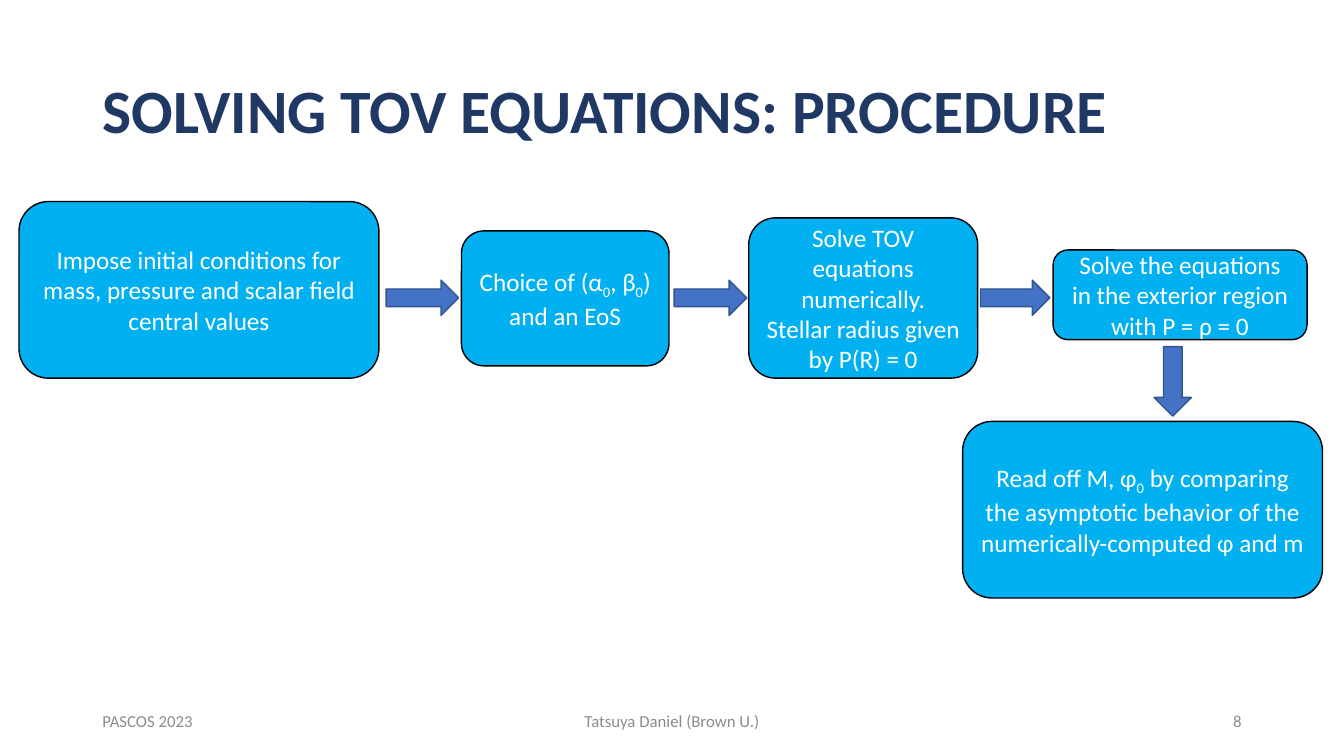
"""Build the slide that shows the procedure for solving the TOV equations."""
from pptx import Presentation
from pptx.dml.color import RGBColor
from pptx.enum.shapes import MSO_SHAPE
from pptx.enum.text import MSO_ANCHOR, PP_ALIGN
from pptx.util import Cm, Pt

ROUNDED = MSO_SHAPE.ROUNDED_RECTANGLE
ARROW = MSO_SHAPE.RIGHT_ARROW
MIDDLE = MSO_ANCHOR.MIDDLE
LEFT, CENTER, RIGHT = PP_ALIGN.LEFT, PP_ALIGN.CENTER, PP_ALIGN.RIGHT

NAVY = RGBColor(0x20, 0x38, 0x64)
SKY = RGBColor(0x00, 0xB0, 0xF0)
BLUE = RGBColor(0x44, 0x72, 0xC4)
DARK_BLUE = RGBColor(0x32, 0x54, 0x91)
BLACK = RGBColor(0x00, 0x00, 0x00)
WHITE = RGBColor(0xFF, 0xFF, 0xFF)
GRAY = RGBColor(0x8C, 0x8C, 0x8C)

TITLE = "SOLVING TOV EQUATIONS: PROCEDURE"
TITLE_AREA = (2.33, 1.01, 29.21, 3.68)

STEPS = [
    ((0.48, 5.08, 9.07, 4.45),
     ["Impose initial conditions for mass, pressure and scalar field central values"]),
    ((11.63, 5.82, 5.23, 3.4),
     ["Choice of (α", "0", ", β", "0", ") and an EoS"]),
    ((18.87, 5.49, 5.77, 4.04),
     ["Solve TOV equations numerically. Stellar radius given by P(R) = 0"]),
    ((26.54, 6.3, 6.4, 2.26),
     ["Solve the equations in the exterior region with P = ρ = 0"]),
    ((24.26, 10.62, 9.07, 4.45),
     ["Read off M, φ", "0",
      " by comparing the asymptotic behavior of the numerically-computed φ and m"]),
]

ARROWS = [
    ((9.73, 7.06, 1.83, 0.89), 0),
    ((16.99, 7.06, 1.83, 0.89), 0),
    ((24.71, 7.06, 1.75, 0.89), 0),
    ((28.68, 9.14, 1.75, 0.94), 90),
]

FOOTER_TOP, FOOTER_HEIGHT = 17.65, 1.01
FOOTERS = [
    (2.33, 7.62, LEFT, "PASCOS 2023"),
    (11.22, 11.43, CENTER, "Tatsuya Daniel (Brown U.)"),
    (23.92, 7.62, RIGHT, "8"),
]


def lengths(area):
    """Turn left, top, width and height in centimetres into lengths."""
    return [Cm(value) for value in area]


def write(shape, pieces, size, color, align, bold=False):
    """Write one paragraph in which every second piece is a subscript."""
    frame = shape.text_frame
    frame.word_wrap = True
    frame.vertical_anchor = MIDDLE
    para = frame.paragraphs[0]
    para.alignment = align
    for index, piece in enumerate(pieces):
        span = para.add_run()
        span.text = piece
        span.font.name = "Calibri"
        span.font.size = Pt(size)
        span.font.bold = bold
        span.font.color.rgb = color
        if index % 2:
            span._r.get_or_add_rPr().set("baseline", "-25000")


def set_title(page):
    """Place and format the title."""
    title = page.shapes.title
    title.left, title.top, title.width, title.height = lengths(TITLE_AREA)
    write(title, [TITLE], 44, NAVY, LEFT, bold=True)
    title.text_frame.paragraphs[0].line_spacing = 0.9


def add_block(page, kind, area, fill, line):
    """Add a filled and outlined shape without a shadow."""
    block = page.shapes.add_shape(kind, *lengths(area))
    block.shadow.inherit = False
    block.fill.solid()
    block.fill.fore_color.rgb = fill
    block.line.color.rgb = line
    block.line.width = Pt(1)
    return block


def add_footer(page, left, width, align, text):
    """Add a small gray text at the foot of the page."""
    area = (left, FOOTER_TOP, width, FOOTER_HEIGHT)
    box = page.shapes.add_textbox(*lengths(area))
    write(box, [text], 12, GRAY, align)


def main():
    """Build the deck and save it."""
    deck = Presentation()
    deck.slide_width, deck.slide_height = Cm(33.87), Cm(19.05)
    page = deck.slides.add_slide(deck.slide_layouts.get_by_name("Title Only"))
    set_title(page)
    for area, pieces in STEPS:
        step = add_block(page, ROUNDED, area, SKY, BLACK)
        write(step, pieces, 18, WHITE, CENTER)
    for area, rotation in ARROWS:
        arrow = add_block(page, ARROW, area, BLUE, DARK_BLUE)
        arrow.rotation = rotation
    for footer in FOOTERS:
        add_footer(page, *footer)
    deck.save("out.pptx")


if __name__ == "__main__":
    main()
